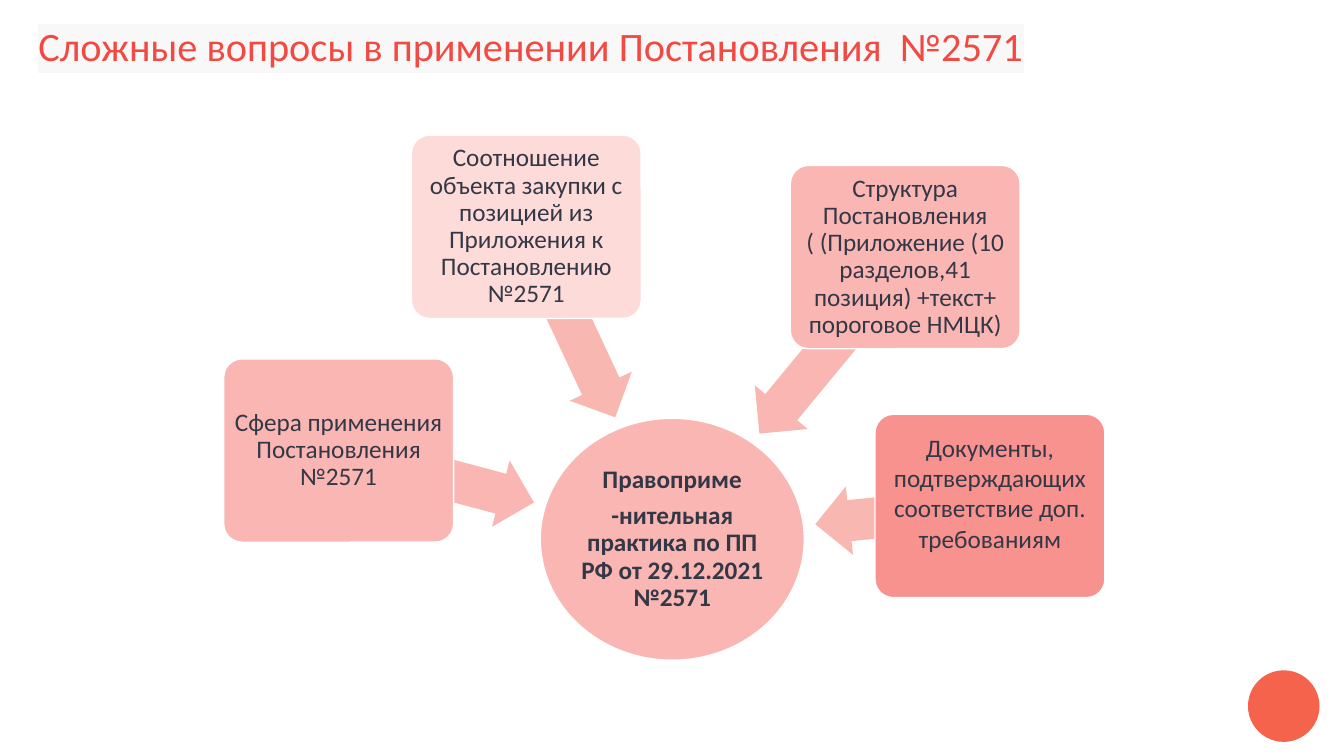
from math import atan2, cos, degrees, hypot, sin

from lxml import etree
from pptx import Presentation
from pptx.dml.color import RGBColor
from pptx.enum.shapes import MSO_SHAPE
from pptx.enum.text import MSO_ANCHOR, PP_ALIGN
from pptx.oxml.ns import qn
from pptx.util import Pt

ELLIPSE = MSO_SHAPE.OVAL
ROUNDED = MSO_SHAPE.ROUNDED_RECTANGLE
LEFT_ARROW = MSO_SHAPE.LEFT_ARROW
TOP = MSO_ANCHOR.TOP
MIDDLE = MSO_ANCHOR.MIDDLE
CENTER = PP_ALIGN.CENTER

WHITE = RGBColor(0xFF, 0xFF, 0xFF)
INK = RGBColor(0x34, 0x38, 0x46)
TITLE_RED = RGBColor(0xF2, 0x49, 0x42)
TITLE_HIGHLIGHT = RGBColor(0xF8, 0xF8, 0xF8)
CORNER_RED = RGBColor(0xF5, 0x63, 0x4D)
PINK = RGBColor(0xFA, 0xB6, 0xB3)
ARROW_PINK = RGBColor(0xF9, 0xB7, 0xB2)
PALE_PINK = RGBColor(0xFC, 0xDB, 0xD9)
DEEP_PINK = RGBColor(0xF7, 0x92, 0x8E)

FONT = "Calibri"
CARD_WIDTH, CARD_HEIGHT = 164.2, 131
ARROW_HEIGHT = 49
HUB_GAP = 8.5

HUB_BOX = (385.9, 298.8, 188.6, 172.8)
HUB_TEXT = ["Правоприме", "-нительная практика по ПП РФ от 29.12.2021 №2571"]

# left, top, card fill, arrow fill, text, line spacing, bottom inset
CARDS = [
    (159.8, 256.3, PINK, PINK, "Сфера применения Постановления №2571", 0.9, 3),
    (293.8, 96.5, PALE_PINK, ARROW_PINK,
     "Соотношение объекта закупки с позицией из Приложения к Постановлению №2571", 0.9, 3),
    (625, 295.9, DEEP_PINK, ARROW_PINK,
     "Документы, подтверждающих соответствие доп. требованиям", 1, 22),
    (564.5, 118.1, PINK, PINK,
     "Структура Постановления ( (Приложение (10 разделов,41 позиция) +текст+ пороговое НМЦК)",
     0.9, 3),
]


def add_filled_shape(slide, kind, box, fill, outline=None):
    shape = slide.shapes.add_shape(kind, *(Pt(length) for length in box))
    shape.shadow.inherit = False
    shape.fill.solid()
    shape.fill.fore_color.rgb = fill
    if outline is None:
        shape.line.fill.background()
    else:
        shape.line.color.rgb = outline
        shape.line.width = Pt(1)
    return shape


def set_frame(frame, insets, anchor):
    frame.word_wrap = True
    frame.vertical_anchor = anchor
    frame.margin_left, frame.margin_top, frame.margin_right, frame.margin_bottom = (
        Pt(inset) for inset in insets)


def add_run(paragraph, text, size, color, bold=False):
    run = paragraph.add_run()
    run.text = text
    run.font.size = Pt(size)
    run.font.bold = bold
    run.font.color.rgb = color
    run.font.name = FONT
    return run


def write_centered(shape, texts, insets, line_spacing, bold=False):
    frame = shape.text_frame
    set_frame(frame, insets, MIDDLE)
    for index, text in enumerate(texts):
        paragraph = frame.add_paragraph() if index else frame.paragraphs[0]
        paragraph.alignment = CENTER
        paragraph.line_spacing = line_spacing
        if index < len(texts) - 1:
            paragraph.space_after = Pt(6.3)
        add_run(paragraph, text, 18, INK, bold)


def add_title(slide, box):
    title = slide.shapes.add_textbox(*(Pt(length) for length in box))
    set_frame(title.text_frame, (0, 3.6, 7.2, 3.6), TOP)
    paragraph = title.text_frame.paragraphs[0]
    paragraph.line_spacing = 0.9
    run = add_run(paragraph, "Сложные вопросы в применении Постановления  №2571", 28.8, TITLE_RED)
    highlight = etree.Element(qn("a:highlight"))
    etree.SubElement(highlight, qn("a:srgbClr"), val=str(TITLE_HIGHLIGHT))
    run.font.fill  
    run._r.rPr.find(qn("a:solidFill")).addnext(highlight)


def add_hub(slide, box):
    hub = add_filled_shape(slide, ELLIPSE, box, PINK, WHITE)
    write_centered(hub, HUB_TEXT, (1, 1, 1, 1), 0.9, bold=True)


def add_arrow_to_hub(slide, start, hub_box, fill):
    left, top, width, height = hub_box
    radius_x, radius_y = width / 2, height / 2
    run_x = left + radius_x - start[0]
    run_y = top + radius_y - start[1]
    angle = atan2(run_y, run_x)
    hub_radius = radius_x * radius_y / hypot(radius_y * cos(angle), radius_x * sin(angle))
    length = hypot(run_x, run_y) - hub_radius - HUB_GAP
    center_x = start[0] + length / 2 * cos(angle)
    center_y = start[1] + length / 2 * sin(angle)
    box = (center_x - length / 2, center_y - ARROW_HEIGHT / 2, length, ARROW_HEIGHT)
    arrow = add_filled_shape(slide, LEFT_ARROW, box, fill)
    arrow.adjustments[0] = 0.6
    arrow.adjustments[1] = 0.5
    arrow.rotation = degrees(angle) + 180


def add_card(slide, box, fill, text, line_spacing, bottom_inset):
    card = add_filled_shape(slide, ROUNDED, box, fill, WHITE)
    card.adjustments[0] = 0.1
    write_centered(card, [text], (3, 3, 3, bottom_inset), line_spacing)


def add_diagram(slide, hub_box):
    add_hub(slide, hub_box)
    for left, top, fill, arrow_fill, text, line_spacing, bottom_inset in CARDS:
        center = (left + CARD_WIDTH / 2, top + CARD_HEIGHT / 2)
        add_arrow_to_hub(slide, center, hub_box, arrow_fill)
        add_card(slide, (left, top, CARD_WIDTH, CARD_HEIGHT), fill, text,
                 line_spacing, bottom_inset)


def main():
    presentation = Presentation()
    presentation.slide_width = Pt(960)
    presentation.slide_height = Pt(540)
    slide = presentation.slides.add_slide(presentation.slide_layouts[6])
    add_filled_shape(slide, ELLIPSE, (891.4, 478.8, 51.1, 51.1), CORNER_RED)
    add_title(slide, (27.4, 15.8, 824.4, 51.8))
    add_diagram(slide, HUB_BOX)
    presentation.save("out.pptx")


if __name__ == "__main__":
    main()
